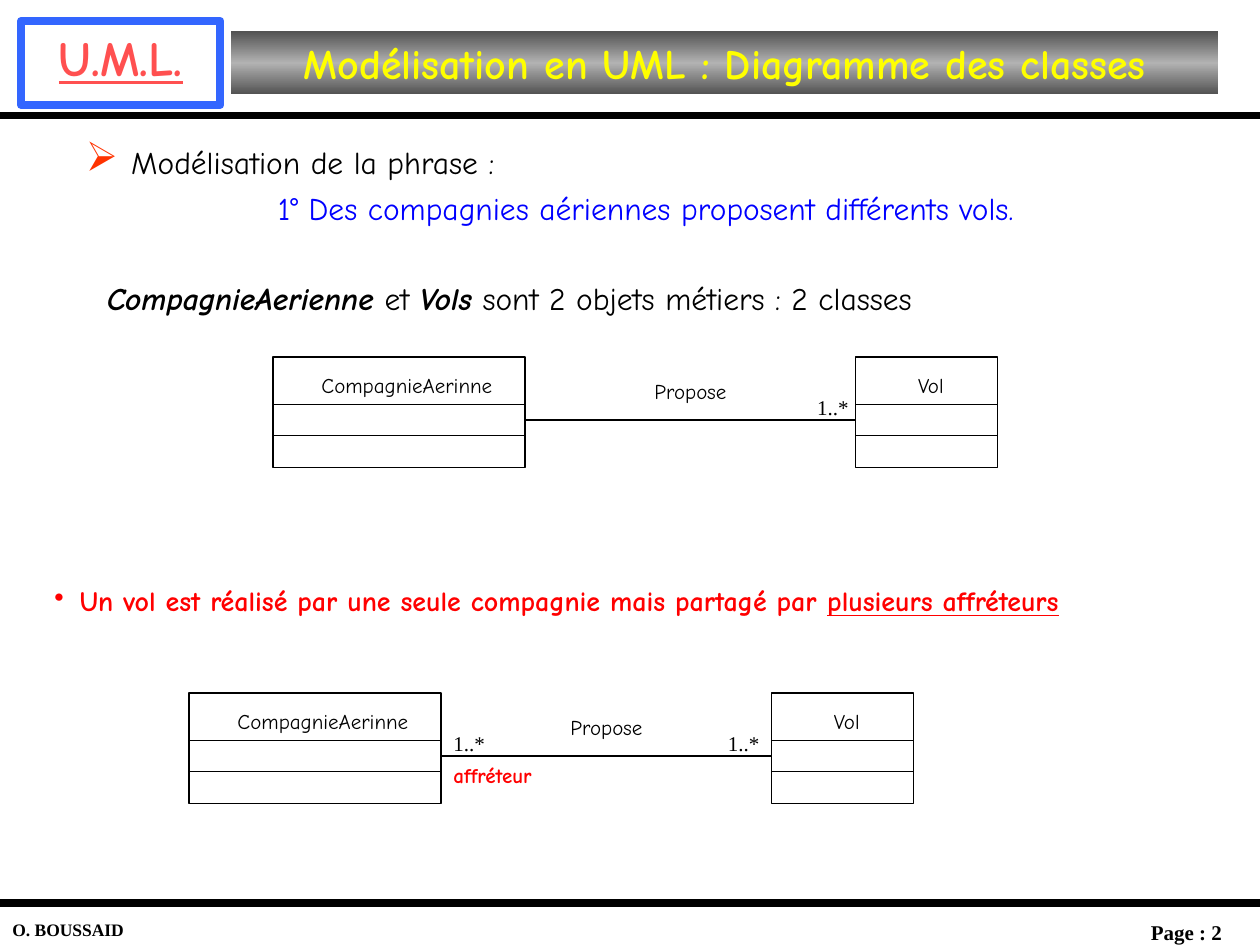
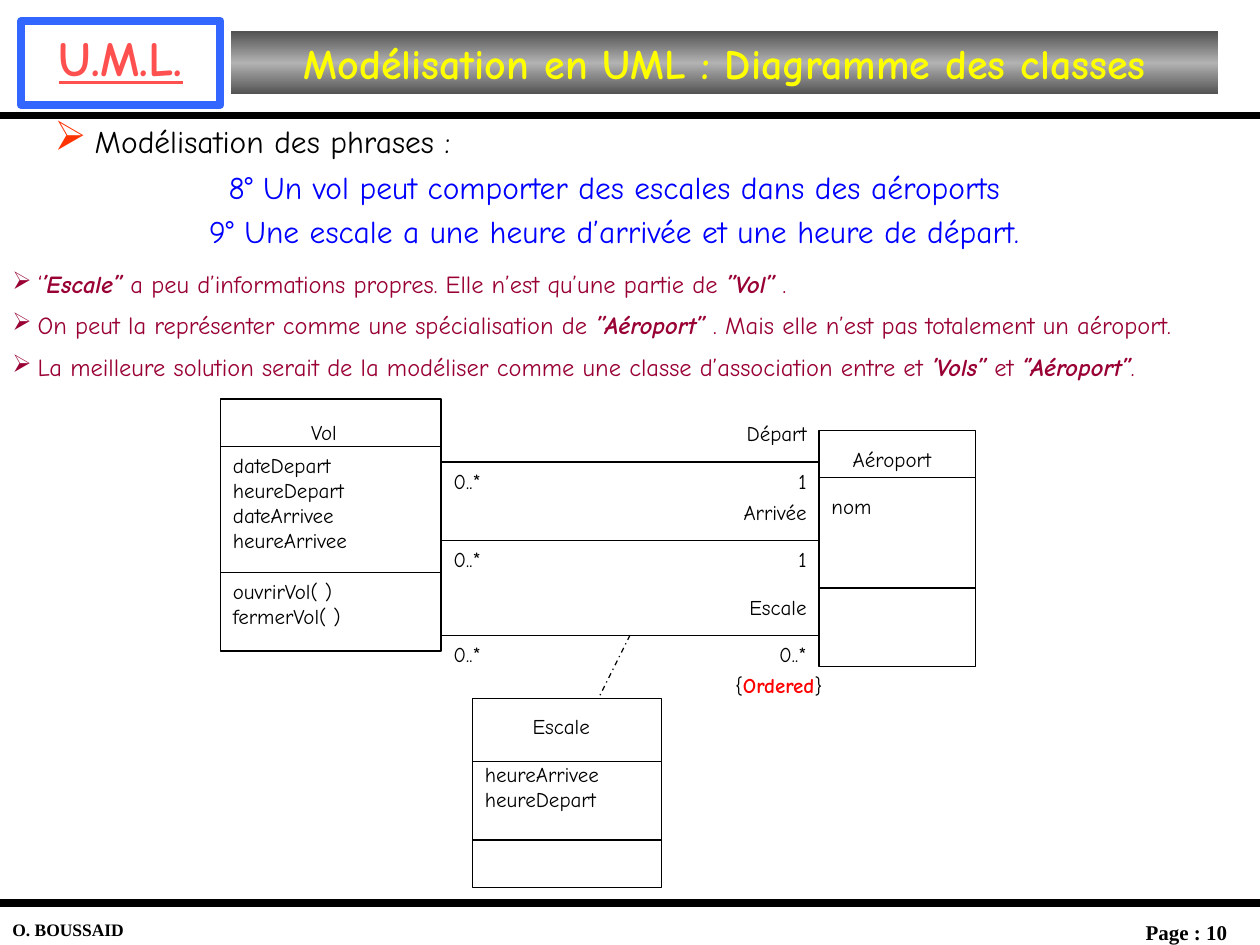
from copy import deepcopy
from lxml import etree
from pptx import Presentation
from pptx import util as u
from pptx.dml.color import RGBColor
from pptx.enum import dml, shapes, text
from pptx.oxml.ns import qn

BLACK = RGBColor(0, 0, 0)
WHITE = RGBColor(255, 255, 255)
RED = RGBColor(255, 0, 0)
BLUE = RGBColor(0, 0, 255)
YELLOW = RGBColor(255, 255, 0)
CORAL = RGBColor(0xFF, 0x50, 0x50)
FRAME_BLUE = RGBColor(0x33, 0x66, 0xFF)
MAROON = RGBColor(0x99, 0x00, 0x33)
BAND_DARK = RGBColor(0x52, 0x52, 0x52)
BAND_LIGHT = RGBColor(0xB2, 0xB2, 0xB2)
COMIC, TIMES = "Comic Neue", "Times New Roman"
LEFT, CENTER, RIGHT = text.PP_ALIGN.LEFT, text.PP_ALIGN.CENTER, text.PP_ALIGN.RIGHT

deck = Presentation()
deck.slide_width, deck.slide_height = u.Inches(10), u.Inches(7.5)
COLUMNS, ROWS = 240, 180
CELL = deck.slide_width / COLUMNS


def write(page, area, lines, size=12, color=BLACK, font=COMIC, align=LEFT, bold=False, inset=0.05, gap=0):
    box = page.shapes.add_textbox(*[round(n * CELL) for n in area])
    frame = box.text_frame
    frame.word_wrap = True
    frame.margin_top = u.Inches(inset)
    for number, line in enumerate(lines):
        para = frame.add_paragraph() if number else frame.paragraphs[0]
        para.alignment = align
        if number and gap:
            para.space_before = u.Pt(gap)
        for piece in line.split("|"):
            span = para.add_run()
            span.text = piece
            span.font.name, span.font.size = font, u.Pt(size)
            span.font.bold = bold
            span.font.color.rgb = color
    return frame.paragraphs


def rule(page, x1, y1, x2, y2, weight=0.75):
    ends = [round(n * CELL) for n in (x1, y1, x2, y2)]
    line = page.shapes.add_connector(shapes.MSO_CONNECTOR.STRAIGHT, *ends)
    line.line.color.rgb = BLACK
    line.line.width = u.Pt(weight)
    etree.SubElement(line._element.spPr, qn("a:effectLst"))
    return line


pages = []
for page_number in (2, 10):
    page = deck.slides.add_slide(deck.slide_layouts[6])
    pages.append(page)

    logo_area = (4, 4, 38, 16)
    logo = write(page, logo_area, ["U.M.L."], 28, CORAL, align=CENTER, bold=True)
    logo[0].runs[0].font.underline = True
    frame = page.shapes.add_shape(shapes.MSO_SHAPE.RECTANGLE, *[round(n * CELL) for n in logo_area])
    frame.shadow.inherit = False
    frame.fill.background()
    frame.line.color.rgb = FRAME_BLUE
    frame.line.width = u.Pt(4.5)

    rule(page, 0, 22, COLUMNS, 22, 4.5)
    write(page, (0, 173.8, 28, 6), ["O. BOUSSAID"], 10, font=TIMES, bold=True)
    write(page, (212, 174, 28, 6), [f"Page : {page_number}"], font=TIMES, align=CENTER, bold=True)
    rule(page, 0, 172, COLUMNS, 172, 4.5)

    band = page.shapes.add_shape(
        shapes.MSO_SHAPE.RECTANGLE, *[round(n * CELL) for n in (44, 6, 188, 12)])
    band.shadow.inherit = False
    band.line.fill.background()
    band.fill.gradient()
    band.fill.gradient_angle = 90
    stops = band.fill.gradient_stops
    stops[0].color.rgb, stops[0].position = BAND_DARK, 0
    stops[1].color.rgb, stops[1].position = BAND_LIGHT, 0.5
    last_stop = deepcopy(stops[0]._gs)
    last_stop.set("pos", "100000")
    stops[1]._gs.addnext(last_stop)
    band.text_frame.text = "Modélisation en UML : Diagramme des classes"
    band.text_frame.vertical_anchor = text.MSO_ANCHOR.MIDDLE
    title = band.text_frame.paragraphs[0]
    title.alignment = CENTER
    span = title.runs[0]
    span.font.name, span.font.size, span.font.bold = COMIC, u.Pt(24), True
    span.font.color.rgb = YELLOW

phrase_page, stopover_page = pages
classes = [
    (stopover_page, "Vol", (42, 76, 42, 48), (9, 33), (3, 4, 33.4, 10)),
    (stopover_page, "Aéroport", (156, 82, 29.8, 45), (9, 30), (0, 3, 27.8, 6)),
    (stopover_page, "Escale", (90, 133, 36, 36), (12, 27), (3, 3, 27.8, 12)),
]
diagrams = [(52, 68, 146), (36, 132, 129)]
for left, top, _ in diagrams:
    classes.append((phrase_page, "CompagnieAerinne", (left, top, 48, 21), (9, 15), (3, 3, 45, 6)))
    classes.append((phrase_page, "Vol", (left + 111, top, 27, 21), (9, 15), (1.7, 3, 25.2, 6)))

for page, name, area, dividers, (dx, dy, name_width, name_height) in classes:
    left, top, width, height = area
    outline = page.shapes.add_shape(shapes.MSO_SHAPE.RECTANGLE, *[round(n * CELL) for n in area])
    outline.shadow.inherit = False
    outline.fill.solid()
    outline.fill.fore_color.rgb = WHITE
    outline.line.color.rgb = BLACK
    outline.line.width = u.Pt(0.75)
    for divider in dividers:
        rule(page, left, top + divider, left + width, top + divider)
    write(page, (left + dx, top + dy, name_width, name_height), [name], align=CENTER, inset=0)

for left, top, multiplicity_left in diagrams:
    rule(phrase_page, left + 48, top + 12, left + 111, top + 12)
    write(phrase_page, (left + 57, top + 3, 45, 9), ["Propose"], align=CENTER)
    write(phrase_page, (multiplicity_left, top + 6, 18, 6), ["1..*"], font=TIMES, align=RIGHT)
write(phrase_page, (84, 144, 45, 9), ["affréteur"], color=RED, bold=True)
write(phrase_page, (84, 138, 18, 6), ["1..*"], font=TIMES)

phrase = write(phrase_page, (14, 26, 218, 18), [
    "Modélisation de la phrase :",
    "1° Des compagnies aériennes proposent différents vols.",
], 18, gap=5)
objects = write(phrase_page, (18, 52, 192, 9.6), [
    "CompagnieAerienne| et |Vols| sont 2 objets métiers : 2 classes"], 18)
charter = write(phrase_page, (8, 110, 221.5, 8.8), [
    "Un vol est réalisé par une seule compagnie mais partagé par |plusieurs affréteurs"],
    16, RED, bold=True)
charter[0].runs[1].font.underline = True

phrases = write(stopover_page, (8, 22, 218, 27), [
    "Modélisation des phrases :",
    "8° Un vol peut comporter des escales dans des aéroports",
    "9° Une escale a une heure d’arrivée et une heure de départ.",
], 18, gap=5)
phrases[2].space_before = u.Pt(3.6)
remarks = write(stopover_page, (0, 50, COLUMNS, 24.7), [
    "‘|’Escale’’| a peu d’informations propres. Elle n’est qu’une partie de |’’Vol’’| .",
    "On peut la représenter comme une spécialisation de |’’Aéroport’’| . Mais elle n’est pas totalement un aéroport.",
    "La meilleure solution serait de la modéliser comme une classe d’association entre et |’Vols’’| et |‘’Aéroport’’|.",
], 14, MAROON, gap=7)

for para in (*phrase[1:], *phrases[1:]):
    para.alignment = CENTER
    para.runs[0].font.color.rgb = BLUE
emphasised = list(objects[0].runs[::2])
for para in remarks:
    emphasised.extend(para.runs[1::2])
for span in emphasised:
    span.font.bold = span.font.italic = True

bullets = [(phrase[0], "➢", 0.36, True), (phrases[0], "➢", 0.32, True), (charter[0], "•", 0.2, False)]
bullets += [(para, "➢", 0.2, False) for para in remarks]
for para, mark, indent, highlighted in bullets:
    properties = para._p.get_or_add_pPr()
    properties.set("marL", str(u.Inches(indent)))
    properties.set("indent", str(-u.Inches(indent)))
    if highlighted:
        mark_color = etree.SubElement(properties, qn("a:buClr"))
        etree.SubElement(mark_color, qn("a:srgbClr"), val="FF3300")
        etree.SubElement(properties, qn("a:buSzPct"), val="130000")
    etree.SubElement(properties, qn("a:buChar"), char=mark)

write(stopover_page, (42, 85, 42, 24), ["dateDepart", "heureDepart", "dateArrivee", "heureArrivee"])
write(stopover_page, (42, 109, 45, 15), ["ouvrirVol( )", "fermerVol( )"])
write(stopover_page, (156, 94, 25.5, 9), ["nom"], inset=0)
write(stopover_page, (90, 145, 33, 15), ["heureArrivee", "heureDepart"], inset=0)

for role, row, multiplicity in (("Départ", 88, "1"), ("Arrivée", 103, "1"), ("Escale", 121, "0..*")):
    rule(stopover_page, 84, row, 156, row)
    write(stopover_page, (129, row - 9, 27, 9), [role], align=RIGHT)
    write(stopover_page, (84, row, 12, 9), ["0..*"])
    write(stopover_page, (144, row, 12, 9), [multiplicity], align=RIGHT)

association = rule(stopover_page, 120, 121, 114, 133)
association.line.dash_style = dml.MSO_LINE.DASH_DOT
ordered = write(stopover_page, (132, 127, 27, 9), ["{|Ordered|}"], align=RIGHT)
ordered[0].runs[1].font.bold = True
ordered[0].runs[1].font.color.rgb = RED

deck.save("out.pptx")
